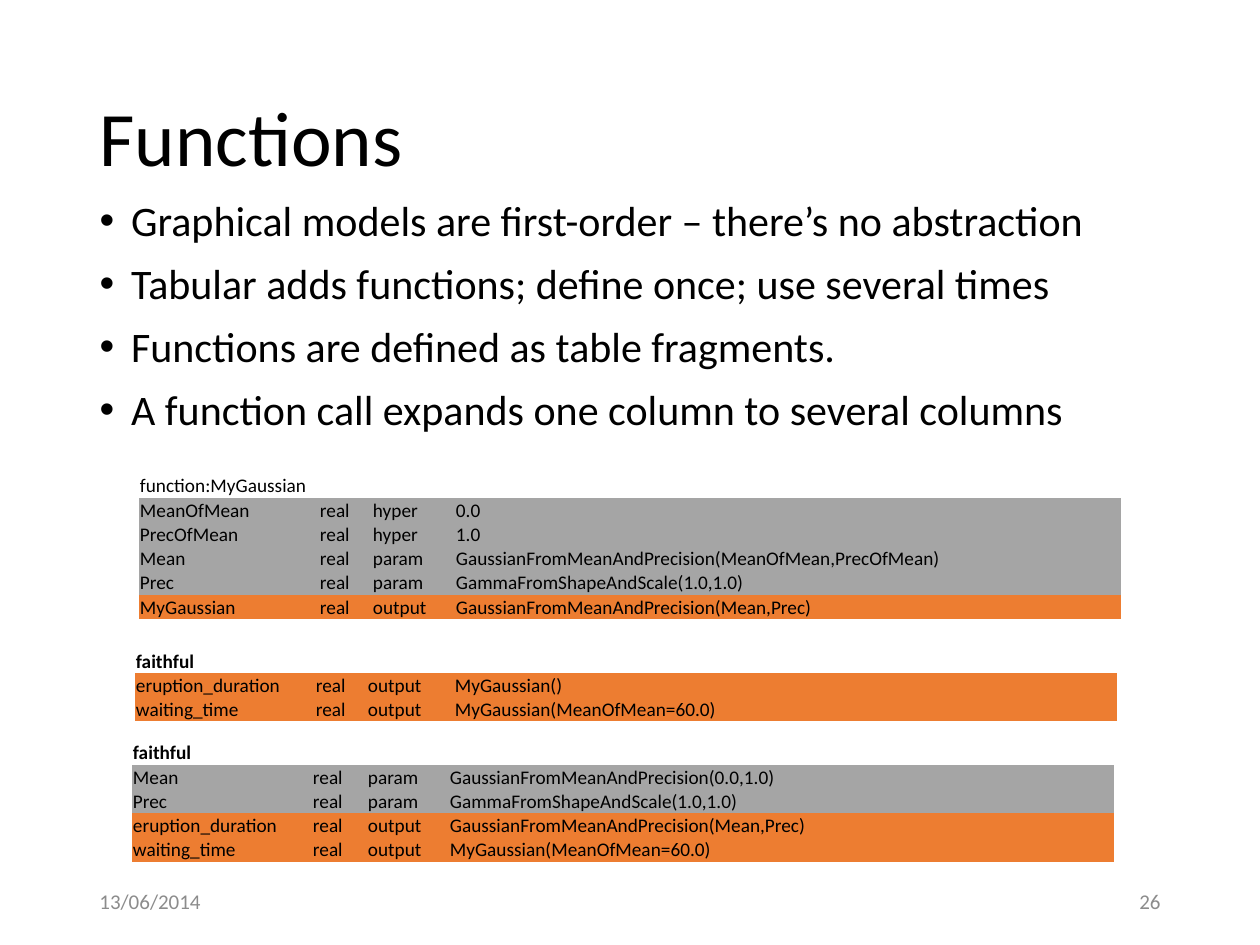
from dataclasses import dataclass

from lxml.etree import SubElement
from pptx import Presentation
from pptx.dml.color import RGBColor as Rgb
from pptx.enum.text import MSO_ANCHOR as Anchor, MSO_AUTO_SIZE as Fit, PP_ALIGN as Align
from pptx.oxml.ns import qn
from pptx.util import Emu, Pt

SCALE = 914400 // 126  # EMU in one px
PLAIN = "{2D5ABB26-0587-4C30-8999-92F81FD0307C}"  # no style, no grid


@dataclass(frozen=True)
class Theme:
    font: str = "Calibri"
    ink: str = "000000"
    pale: str = "8C8C8C"
    gray: str = "A5A5A5"
    orange: str = "ED7D31"
    title: int = 44
    body: int = 24
    foot: int = 12
    cell: int = 11


LOOK = Theme()

POINTS = [
    "Graphical models are first-order – there’s no abstraction",
    "Tabular adds functions; define once; use several times",
    "Functions are defined as table fragments.",
    "A function call expands one column to several columns",
]

# Each table: left, top, column widths, head height, head, bold head, rows
TABLES = [
    (139, 473, (180, 53, 83, 666), 25, "function:MyGaussian", False, [
        ("MeanOfMean", "hyper", "0.0"),
        ("PrecOfMean", "hyper", "1.0"),
        ("Mean", "param", "GaussianFromMeanAndPrecision(MeanOfMean,PrecOfMean)"),
        ("Prec", "param", "GammaFromShapeAndScale(1.0,1.0)"),
        ("MyGaussian", "output", "GaussianFromMeanAndPrecision(Mean,Prec)"),
    ]),
    (135, 649, (180, 52, 87, 663), 20, "faithful", True, [
        ("eruption_duration", "output", "MyGaussian()"),
        ("waiting_time", "output", "MyGaussian(MeanOfMean=60.0)"),
    ]),
    (132, 718, (180, 55, 82, 665), 47, "faithful", True, [
        ("Mean", "param", "GaussianFromMeanAndPrecision(0.0,1.0)"),
        ("Prec", "param", "GammaFromShapeAndScale(1.0,1.0)"),
        ("eruption_duration", "output", "GaussianFromMeanAndPrecision(Mean,Prec)"),
        ("waiting_time", "output", "MyGaussian(MeanOfMean=60.0)"),
    ]),
]
ROW = 20


def px(n):
    return Emu(n * SCALE)


def place(shape, *box):
    shape.left, shape.top, shape.width, shape.height = map(px, box)


def write(para, text, size, color=LOOK.ink, bold=False):
    run = para.add_run()
    run.text = text
    font = run.font
    font.name, font.size, font.bold = LOOK.font, Pt(size), bold
    font.color.rgb = Rgb.from_string(color)


def add_title(slide, text):
    shape = slide.shapes.title
    place(shape, 87, 50, 1086, 183)
    frame = shape.text_frame
    frame.auto_size = Fit.NONE
    frame.vertical_anchor = Anchor.MIDDLE
    para = frame.paragraphs[0]
    para.alignment, para.line_spacing = Align.LEFT, 0.9
    write(para, text, LOOK.title)


def add_list(slide, items):
    shape = slide.placeholders[1]
    place(shape, 87, 194, 1043, 281)
    frame = shape.text_frame
    frame.auto_size = Fit.NONE
    for i, item in enumerate(items):
        para = frame.add_paragraph() if i else frame.paragraphs[0]
        para.line_spacing, para.space_before = 0.9, Pt(10)
        write(para, item, LOOK.body)
        # Hanging bullet
        props = para._p.get_or_add_pPr()
        props.set("marL", str(Pt(18)))
        props.set("indent", str(-Pt(18)))
        SubElement(props, qn("a:buFont"), typeface="Arial")
        SubElement(props, qn("a:buChar"), char="•")


def add_foot(slide, left, text, align):
    shape = slide.shapes.add_textbox(px(left), px(876), px(284), px(50))
    frame = shape.text_frame
    frame.word_wrap = True
    frame.vertical_anchor = Anchor.MIDDLE
    para = frame.paragraphs[0]
    para.alignment = align
    write(para, text, LOOK.foot, LOOK.pale)


def fill_cell(cell, text, color=None, bold=False):
    cell.vertical_anchor = Anchor.BOTTOM
    cell.margin_left = cell.margin_right = cell.margin_top = px(1)
    cell.margin_bottom = 0
    if color:
        cell.fill.solid()
        cell.fill.fore_color.rgb = Rgb.from_string(color)
    else:
        cell.fill.background()
    para = cell.text_frame.paragraphs[0]
    if text:
        write(para, text, LOOK.cell, bold=bold)
    else:  # keeps the empty cell as low as its row
        SubElement(para._p, qn("a:endParaRPr"), sz=str(LOOK.cell * 100))


def add_grid(slide, left, top, widths, first, head, bold, rows):
    high = first + ROW * len(rows)
    table = slide.shapes.add_table(len(rows) + 1, len(widths), px(left), px(top),
                                   px(sum(widths)), px(high)).table
    table.first_row = table.horz_banding = False
    table._tbl.tblPr.find(qn("a:tableStyleId")).text = PLAIN
    for col, width in zip(table.columns, widths):
        col.width = px(width)
    for i, row in enumerate(table.rows):
        row.height = px(ROW if i else first)
    # Head row
    for j in range(len(widths)):
        fill_cell(table.cell(0, j), "" if j else head, bold=bold)
    # Field rows: outputs stand out
    for i, (name, role, model) in enumerate(rows, 1):
        color = LOOK.orange if role == "output" else LOOK.gray
        for j, text in enumerate((name, "real", role, model)):
            fill_cell(table.cell(i, j), text, color)


def main():
    deck = Presentation()
    deck.slide_width, deck.slide_height = px(1260), px(945)
    slide = deck.slides.add_slide(deck.slide_layouts[1])
    add_title(slide, "Functions")
    add_list(slide, POINTS)
    add_foot(slide, 87, "13/06/2014", Align.LEFT)
    add_foot(slide, 889, "26", Align.RIGHT)
    for grid in TABLES:
        add_grid(slide, *grid)
    deck.save("out.pptx")


if __name__ == "__main__":
    main()
